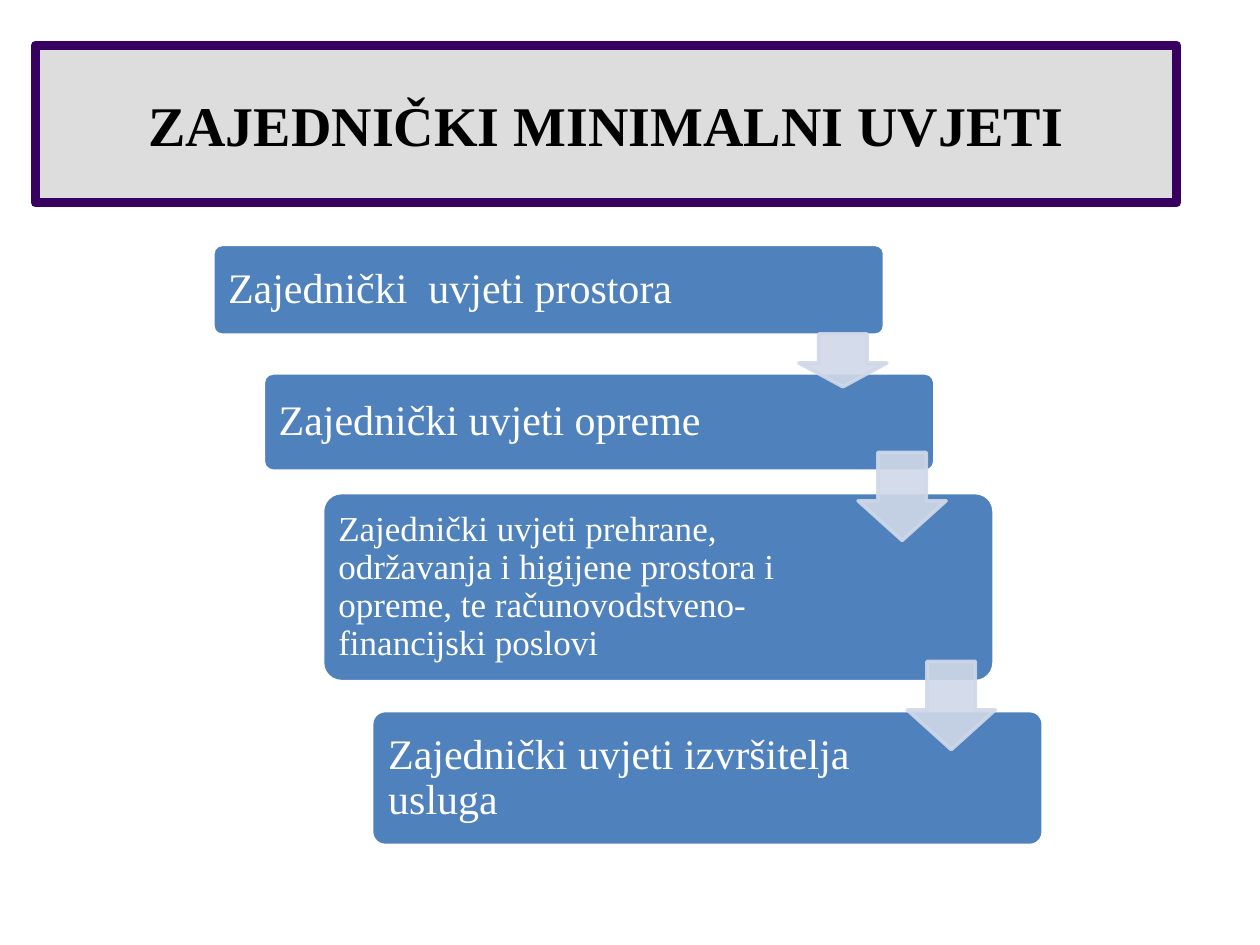
"""Build a slide with a framed title above a descending staircase of four conditions."""
from lxml import etree
from pptx import Presentation
from pptx.dml.color import RGBColor
from pptx.enum.shapes import MSO_SHAPE
from pptx.enum.text import MSO_ANCHOR, PP_ALIGN
from pptx.oxml.ns import qn
from pptx.util import Inches, Pt

RECT, ROUND, DOWN = MSO_SHAPE.RECTANGLE, MSO_SHAPE.ROUNDED_RECTANGLE, MSO_SHAPE.DOWN_ARROW
MIDDLE = MSO_ANCHOR.MIDDLE
LEFT, CENTER = PP_ALIGN.LEFT, PP_ALIGN.CENTER

THEME = {
    "font": "Times New Roman",
    "title_size": 32, "step_size": 24, "long_size": 20,
    "title_fill": "DDDDDD", "title_line": "38015F", "title_text": "000000",
    "step_fill": "4F81BD", "step_line": "FFFFFF", "step_text": "FFFFFF",
    "arrow": "D0D8E8", "arrow_alpha": 90,
}

TITLE = "ZAJEDNIČKI MINIMALNI UVJETI"
TITLE_BOX = (0.28, 0.36, 9.06, 1.25)
STEPS = [
    {"text": "Zajednički  uvjeti prostora", "at": (1.69, 1.94), "height": 0.72},
    {"text": "Zajednički uvjeti opreme", "at": (2.09, 2.96), "height": 0.78},
    {"text": "Zajednički uvjeti prehrane, održavanja i higijene prostora i opreme, "
             "te računovodstveno-financijski poslovi",
     "at": (2.56, 3.91), "height": 1.5, "size": "long_size", "inset": 0.08},
    {"text": "Zajednički uvjeti izvršitelja usluga", "at": (2.95, 5.64), "height": 1.07},
]
ARROWS = [(6.34, 2.65, 0.42), (6.81, 3.59, 0.7), (7.2, 5.25, 0.7)]
STEP_WIDTH, TEXT_WIDTH, ARROW_WIDTH = 5.33, 4.12, 0.7
CORNER, CORNER_PAD = 0.1, 0.03


def add_block(slide, kind, box, fill, line, width, adjustments=()):
    sp = slide.shapes.add_shape(kind, *map(Inches, box))
    sp.shadow.inherit = False
    sp.fill.solid()
    sp.fill.fore_color.rgb = RGBColor.from_string(fill)
    sp.line.color.rgb = RGBColor.from_string(line)
    sp.line.width = Pt(width)
    for i, value in enumerate(adjustments):
        sp.adjustments[i] = value
    return sp


def set_text(sp, text, size, color, align, inset=0.1, bold=False):
    tf = sp.text_frame
    tf.word_wrap = True
    tf.vertical_anchor = MIDDLE
    tf.margin_left = tf.margin_right = tf.margin_top = tf.margin_bottom = Inches(inset)
    p = tf.paragraphs[0]
    p.text = text
    p.alignment = align
    p.font.name = THEME["font"]
    p.font.size = Pt(size)
    p.font.bold = bold
    p.font.color.rgb = RGBColor.from_string(color)
    return p


def add_step(slide, step):
    x, y = step["at"]
    h = step["height"]
    add_block(slide, ROUND, (x, y, STEP_WIDTH, h),
              THEME["step_fill"], THEME["step_line"], 2, [CORNER])
    pad = CORNER_PAD * h
    box = (x + pad, y + pad, TEXT_WIDTH, h - 2 * pad)
    sp = slide.shapes.add_textbox(*map(Inches, box))
    p = set_text(sp, step["text"], THEME[step.get("size", "step_size")],
                 THEME["step_text"], LEFT, step.get("inset", 0.1))
    p.line_spacing = 0.9


def add_arrow(slide, x, y, h):
    sp = add_block(slide, DOWN, (x, y, ARROW_WIDTH, h),
                   THEME["arrow"], THEME["arrow"], 2, [0.55, 0.45])
    for color in sp._element.spPr.iter(qn("a:srgbClr")):
        etree.SubElement(color, qn("a:alpha"), val=str(THEME["arrow_alpha"] * 1000))


def main():
    prs = Presentation()
    prs.slide_width, prs.slide_height = Inches(10), Inches(7.5)
    slide = prs.slides.add_slide(prs.slide_layouts[6])
    title = add_block(slide, RECT, TITLE_BOX, THEME["title_fill"], THEME["title_line"], 5)
    set_text(title, TITLE, THEME["title_size"], THEME["title_text"], CENTER, bold=True)
    for step in STEPS:
        add_step(slide, step)
    for arrow in ARROWS:
        add_arrow(slide, *arrow)
    prs.save("out.pptx")


if __name__ == "__main__":
    main()
